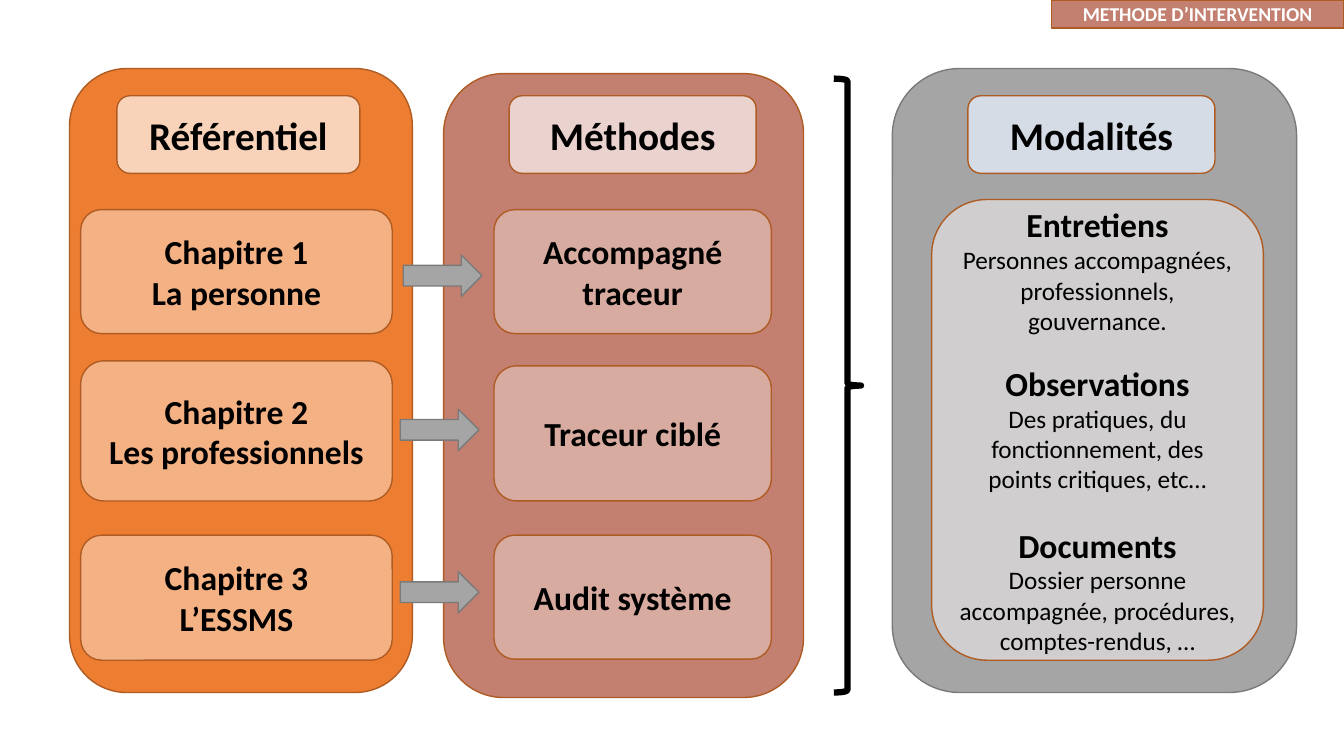
from collections import namedtuple

from pptx import Presentation
from pptx.dml.color import RGBColor
from pptx.enum.shapes import MSO_SHAPE
from pptx.enum.text import MSO_ANCHOR, PP_ALIGN
from pptx.util import Inches, Pt

COLUMNS, ROWS = 1333, 750
SLIDE_WIDTH, SLIDE_HEIGHT = Inches(13.33), Inches(7.5)
FONT = "Calibri"
COLORS = {
    "orange": "ED7D31", "orange_card": "F4B183", "orange_title": "F9D3B9",
    "brick": "C37F6F", "brick_card": "D8ABA0", "brick_title": "EAD3CE",
    "gray": "A5A5A5", "gray_card": "D0CECE", "blue_title": "D6DCE5",
    "rust": "AF5C24", "gray_edge": "7A7A7A", "black": "000000", "white": "FFFFFF",
}
Box = namedtuple("Box", "column row columns rows")
Line = namedtuple("Line", "text size bold gap", defaults=(24, True, 0))

CHAPTERS = [
    (Box(11, 140, 309, 123), [Line("Chapitre 1"), Line("La personne")]),
    (Box(11, 290, 309, 139), [Line("Chapitre 2"), Line("Les professionnels")]),
    (Box(11, 463, 309, 124), [Line("Chapitre 3"), Line("L’ESSMS")]),
]
METHODS = [
    (Box(50, 135, 275, 123), [Line("Accompagné traceur")]),
    (Box(50, 290, 275, 134), [Line("Traceur ciblé")]),
    (Box(50, 458, 275, 123), [Line("Audit système")]),
]
MODALITIES = [
    (Box(39, 130, 329, 457), [
        Line("Entretiens"),
        Line("Personnes accompagnées, professionnels, gouvernance.", 18, False),
        Line("Observations", gap=19.5),
        Line("Des pratiques, du fonctionnement, des points critiques, etc…", 18, False),
        Line("Documents", gap=22),
        Line("Dossier personne accompagnée, procédures, comptes-rendus, …", 18, False),
    ]),
]


def inside(outer, inner):
    """Return the inner box moved to the origin of the outer box."""
    return Box(outer.column + inner.column, outer.row + inner.row, inner.columns, inner.rows)


def add_block(slide, preset, box, fill, edge="rust", edge_width=1):
    """Place a preset shape on the slide grid."""
    block = slide.shapes.add_shape(
        preset,
        round(SLIDE_WIDTH * box.column / COLUMNS), round(SLIDE_HEIGHT * box.row / ROWS),
        round(SLIDE_WIDTH * box.columns / COLUMNS), round(SLIDE_HEIGHT * box.rows / ROWS),
    )
    block.shadow.inherit = False
    if fill:
        block.fill.solid()
        block.fill.fore_color.rgb = RGBColor.from_string(COLORS[fill])
    else:
        block.fill.background()
    block.line.color.rgb = RGBColor.from_string(COLORS[edge])
    block.line.width = Pt(edge_width)
    return block


def write_lines(block, lines, color="black"):
    """Write centred paragraphs in a block."""
    frame = block.text_frame
    frame.word_wrap = True
    frame.vertical_anchor = MSO_ANCHOR.MIDDLE
    for index, line in enumerate(lines):
        paragraph = frame.add_paragraph() if index else frame.paragraphs[0]
        paragraph.text = line.text
        paragraph.alignment = PP_ALIGN.CENTER
        paragraph.space_before = Pt(line.gap)
        paragraph.font.name = FONT
        paragraph.font.size = Pt(line.size)
        paragraph.font.bold = line.bold
        paragraph.font.color.rgb = RGBColor.from_string(COLORS[color])


def add_panel(slide, box, fill, edge, title, title_box, title_fill, cards, card_fill):
    """Build a rounded panel with its title and cards."""
    rounded = MSO_SHAPE.ROUNDED_RECTANGLE
    add_block(slide, rounded, box, fill, edge)
    heading = add_block(slide, rounded, inside(box, title_box), title_fill)
    write_lines(heading, [Line(title, 28)])
    for card_box, lines in cards:
        card = add_block(slide, rounded, inside(box, card_box), card_fill)
        write_lines(card, lines)


def add_section_tag(slide, box):
    """Build the section tag in the top corner."""
    tag = add_block(slide, MSO_SHAPE.RECTANGLE, box, "brick")
    write_lines(tag, [Line("METHODE D’INTERVENTION", 14)], "white")


def add_links(slide, box):
    """Build the arrows from chapters to methods and the closing brace."""
    for column, row in ((3, 175), (0, 328), (0, 489)):
        arrow_box = inside(box, Box(column, row, 78, 41))
        add_block(slide, MSO_SHAPE.RIGHT_ARROW, arrow_box, "gray", "gray_edge")
    brace_box = inside(box, Box(430, 0, 27, 609))
    add_block(slide, MSO_SHAPE.RIGHT_BRACE, brace_box, None, "black", 4.5)


def main():
    """Build and save the slide."""
    presentation = Presentation()
    presentation.slide_width, presentation.slide_height = SLIDE_WIDTH, SLIDE_HEIGHT
    slide = presentation.slides.add_slide(presentation.slide_layouts[6])
    add_panel(slide, Box(69, 68, 340, 619), "orange", "rust", "Référentiel",
              Box(47, 27, 241, 77), "orange_title", CHAPTERS, "orange_card")
    add_panel(slide, Box(440, 73, 357, 619), "brick", "rust", "Méthodes",
              Box(65, 22, 245, 77), "brick_title", METHODS, "brick_card")
    add_panel(slide, Box(885, 68, 401, 619), "gray", "gray_edge", "Modalités",
              Box(75, 27, 245, 77), "blue_title", MODALITIES, "gray_card")
    add_links(slide, Box(397, 78, 457, 609))
    add_section_tag(slide, Box(1043, 0, 290, 28))
    presentation.save("out.pptx")


if __name__ == "__main__":
    main()
